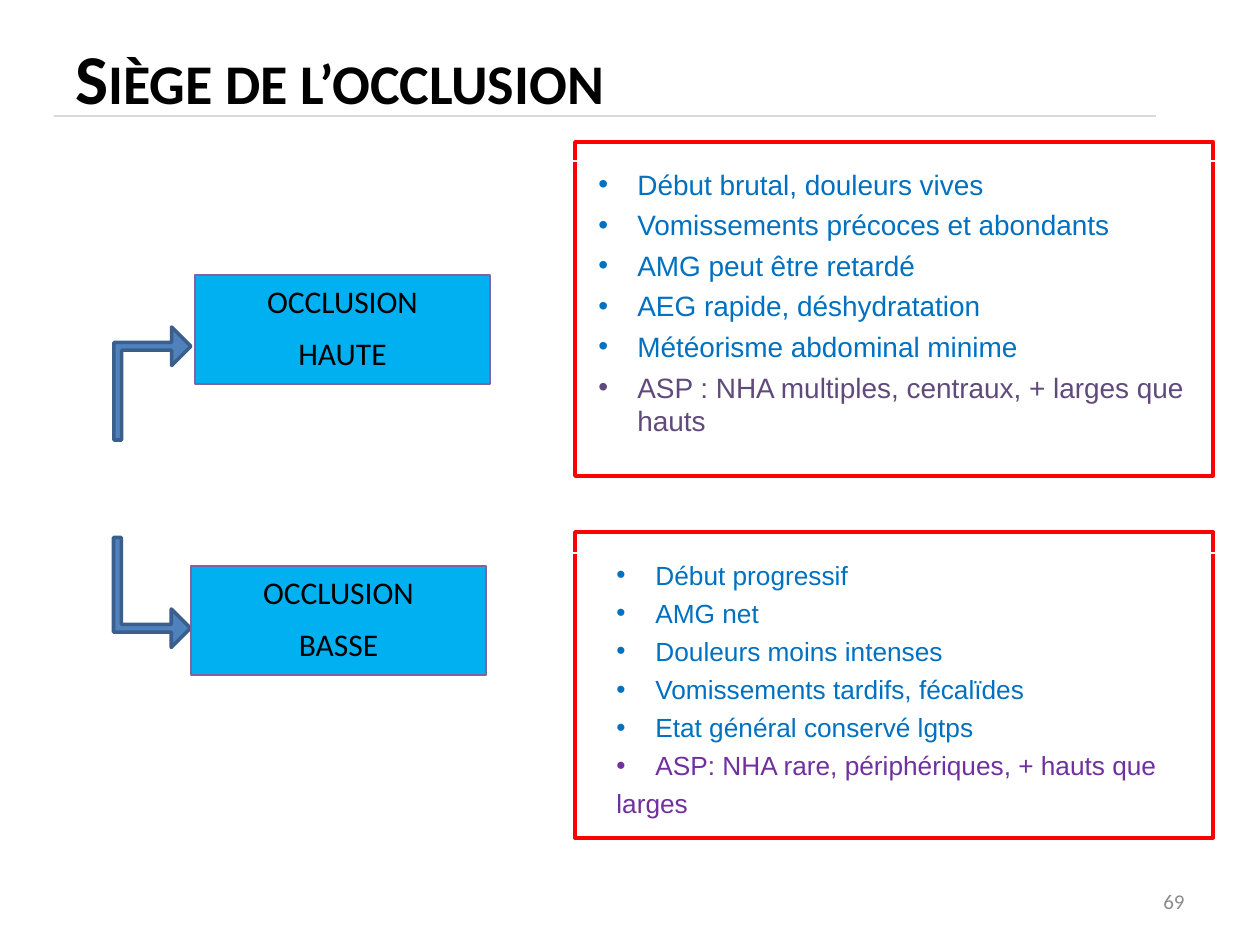
from lxml import etree
from pptx import Presentation, util as u
from pptx.dml.color import RGBColor
from pptx.enum import shapes, text
from pptx.oxml.ns import qn

PX = u.Inches(1) / 126
C = {
    "black": "000000", "rule": "D9D9D9", "sky": "00B0F0", "violet": "8064A2",
    "steel": "4F81BD", "navy": "3A5F8C", "red": "FF0000", "white": "FFFFFF",
    "blue": "0070C0", "plum": "604A7B", "purple": "7030A0", "grey": "8C8C8C",
}
KIND = shapes.MSO_SHAPE
ALIGN = text.PP_ALIGN
ANCHOR = text.MSO_ANCHOR

SITES = [
    {
        "label": ("OCCLUSION", "HAUTE"), "label_at": (195, 275, 295, 109),
        "arrow_at": (96, 345, 113, 77), "flip": True,
        "frame_at": (575, 142, 638, 334), "list_at": (523, 161, 726, 326),
        "size": 16, "accent": "plum",
        "signs": ["Début brutal, douleurs vives", "Vomissements précoces et abondants",
                  "AMG peut être retardé", "AEG rapide, déshydratation",
                  "Météorisme abdominal minime"],
        "xray": "ASP : NHA multiples, centraux, + larges que hauts", "tail": None,
    },
    {
        "label": ("OCCLUSION", "BASSE"), "label_at": (191, 566, 295, 109),
        "arrow_at": (97, 554, 110, 77), "flip": False,
        "frame_at": (575, 532, 638, 306), "list_at": (541, 553, 726, 326),
        "size": 15, "accent": "purple",
        "signs": ["Début progressif", "AMG net", "Douleurs moins intenses",
                  "Vomissements tardifs, fécalïdes", "Etat général conservé lgtps"],
        "xray": "ASP: NHA rare, périphériques, + hauts que", "tail": "larges",
    },
]


def px(n):
    return u.Emu(round(n * PX))


def rgb(name):
    return RGBColor.from_string(C[name])


def assign(obj, values):
    for key, value in values.items():
        setattr(obj, key, value)


def add_box(s, kind, at, fill, line, width):
    sp = s.shapes.add_shape(kind, *map(px, at))
    sp.shadow.inherit = False
    if fill:
        sp.fill.solid()
        sp.fill.fore_color.rgb = rgb(fill)
    else:
        sp.fill.background()
    sp.line.color.rgb = rgb(line)
    sp.line.width = u.Pt(width)
    return sp


def add_line(s, x1, x2, y):
    cn = s.shapes.add_connector(shapes.MSO_CONNECTOR.STRAIGHT, px(x1), px(y), px(x2), px(y))
    cn.line.color.rgb = rgb("rule")
    cn.line.width = u.Pt(1.5)
    etree.SubElement(cn._element.spPr, qn("a:effectLst"))


def add_par(tf, words, color, font, **layout):
    p = tf.paragraphs[0]
    if p.runs:
        p = tf.add_paragraph()
    assign(p, {"alignment": ALIGN.LEFT, **layout})
    r = p.add_run()
    r.text = words
    assign(r.font, font)
    r.font.color.rgb = rgb(color)
    return p, r


def add_text(s, at, words, color, font, align):
    tf = s.shapes.add_textbox(*map(px, at)).text_frame
    assign(tf, {"word_wrap": True, "vertical_anchor": ANCHOR.MIDDLE})
    return add_par(tf, words, color, font, alignment=align)[1]


def set_indent(p, left, first, bullet):
    pPr = p._p.get_or_add_pPr()
    pPr.set("marL", str(px(left)))
    pPr.set("indent", str(px(first)))
    if bullet:
        etree.SubElement(pPr, qn("a:buFont")).set("typeface", "Arial")
        etree.SubElement(pPr, qn("a:buChar")).set("char", "•")


def add_arrow(s, at, flip):
    sp = add_box(s, KIND.BENT_UP_ARROW, at, "steel", "navy", 2)
    sp.rotation = 90
    for i, value in enumerate((0.101, 0.25, 0.25)):
        sp.adjustments[i] = value
    if flip:
        sp._element.spPr.find(qn("a:xfrm")).set("flipH", "1")


def add_label(s, at, lines):
    tf = add_box(s, KIND.RECTANGLE, at, "sky", "violet", 0.75).text_frame
    assign(tf, {"word_wrap": True, "vertical_anchor": ANCHOR.MIDDLE,
                "margin_left": px(9), "margin_right": px(9),
                "margin_top": px(5), "margin_bottom": px(5)})
    for words in lines:
        add_par(tf, words, "black", {"name": "Calibri", "size": u.Pt(18)},
                alignment=ALIGN.CENTER, line_spacing=0.9, space_before=u.Pt(10))


def add_signs(s, site):
    add_box(s, KIND.RECTANGLE, site["frame_at"], None, "red", 2)
    tf = add_box(s, KIND.RECTANGLE, site["list_at"], None, "white", 0.75).text_frame
    assign(tf, {"word_wrap": True, "vertical_anchor": ANCHOR.TOP})
    font = {"name": "Arial", "size": u.Pt(site["size"])}
    gap = u.Pt(site["size"] / 4)
    items = [(words, "blue") for words in site["signs"]] + [(site["xray"], site["accent"])]
    for words, color in items:
        p, _ = add_par(tf, words, color, font, level=1, space_before=gap)
        set_indent(p, 102, -39, True)
    if site["tail"]:
        p, _ = add_par(tf, site["tail"], site["accent"], font, level=1, space_before=gap)
        set_indent(p, 63, 0, False)


def main():
    prs = Presentation()
    assign(prs, {"slide_width": u.Inches(10), "slide_height": u.Inches(7.5)})
    s = prs.slides.add_slide(prs.slide_layouts[6])
    add_line(s, 54, 1156, 116)
    title = add_text(s, (63, 38, 1134, 77), "Siège de l’occlusion", "black",
                     {"name": "Calibri", "size": u.Pt(40), "bold": True}, ALIGN.LEFT)
    title._r.get_or_add_rPr().set("cap", "small")
    for site in SITES:
        add_arrow(s, site["arrow_at"], site["flip"])
        add_label(s, site["label_at"], site["label"])
        add_signs(s, site)
    add_text(s, (903, 876, 294, 50), "69", "grey",
             {"name": "Calibri", "size": u.Pt(12)}, ALIGN.RIGHT)
    prs.save("out.pptx")


if __name__ == "__main__":
    main()
